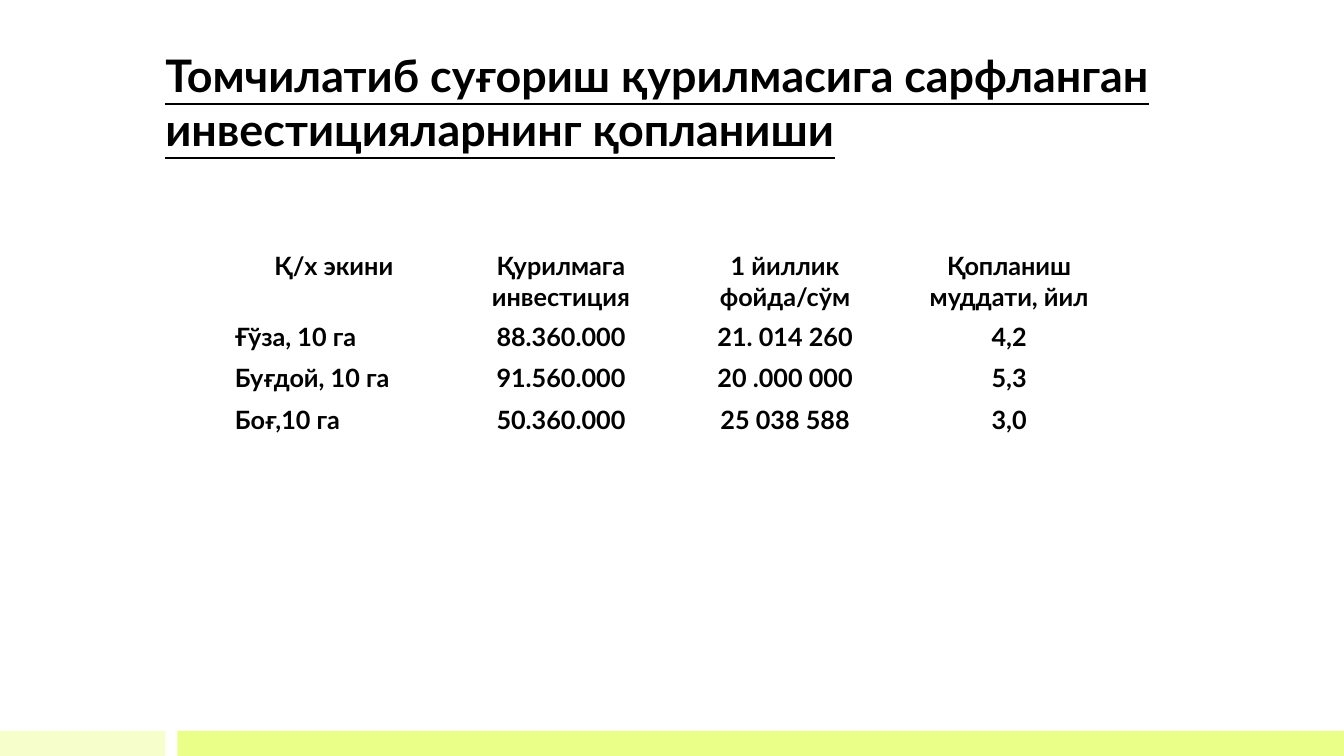
"""Build the slide on the payback of drip irrigation investments."""
from lxml import etree
from pptx import Presentation
from pptx.dml.color import RGBColor
from pptx.enum.shapes import MSO_SHAPE
from pptx.enum.text import MSO_ANCHOR, MSO_AUTO_SIZE, PP_ALIGN
from pptx.oxml.ns import qn
from pptx.util import Inches, Pt

RECT = MSO_SHAPE.RECTANGLE
BOTTOM = MSO_ANCHOR.BOTTOM
NO_FIT = MSO_AUTO_SIZE.NONE
LEFT, CENTER = PP_ALIGN.LEFT, PP_ALIGN.CENTER

TITLE = "Томчилатиб суғориш қурилмасига сарфланган инвестицияларнинг қопланиши"
ROWS = [
    ("Қ/х экини ", "Қурилмага инвестиция", "1 йиллик фойда/сўм", "Қопланиш муддати, йил"),
    ("Ғўза, 10 га", "88.360.000", "21. 014 260", "4,2"),
    ("Буғдой, 10 га", "91.560.000", "20 .000 000", "5,3"),
    ("Боғ,10 га", "50.360.000", "25 038 588", "3,0"),
]
THEME = {
    "font": "Lato", "text": "000000", "border": "FFFFFF",
    "pale": "F6FFCC", "lime": "E9FF88", "title": 32, "body": 18,
}
SLIDE_W, SLIDE_H = 13.33, 7.5
BAR_H = 0.25
BARS = [(0, 1.64, "pale"), (1.76, SLIDE_W - 1.76, "lime")]
TITLE_BOX = (1.54, 0.3, 10.25, 1.29)
TABLE_X, TABLE_Y, TABLE_W = 2.23, 2.44, 8.89
HEADER_H, ROW_H = 0.7, 0.41
THIN, THICK = 1, 3


def color(name):
    return RGBColor.from_string(THEME[name])


def write(tf, text, size, align, **extra):
    p = tf.paragraphs[0]
    p.alignment = align
    r = p.add_run()
    r.text = text
    font = {"name": THEME["font"], "size": Pt(THEME[size]), "bold": True, **extra}
    for key, value in font.items():
        setattr(r.font, key, value)
    r.font.color.rgb = color("text")


def add_borders(cell, top, bottom):
    tc_pr = cell._tc.get_or_add_tcPr()
    for side, width in {"L": THIN, "R": THIN, "T": top, "B": bottom}.items():
        ln = etree.SubElement(tc_pr, qn(f"a:ln{side}"), w=str(Pt(width)))
        fill = etree.SubElement(ln, qn("a:solidFill"))
        etree.SubElement(fill, qn("a:srgbClr"), val=THEME["border"])


def add_bars(slide):
    for x, width, fill in BARS:
        box = (x, SLIDE_H - BAR_H, width, BAR_H)
        sp = slide.shapes.add_shape(RECT, *map(Inches, box))
        sp.shadow.inherit = False
        sp.fill.solid()
        sp.fill.fore_color.rgb = color(fill)
        sp.line.fill.background()


def add_title(slide):
    sp = slide.shapes.title
    for key, value in zip(("left", "top", "width", "height"), TITLE_BOX):
        setattr(sp, key, Inches(value))
    tf = sp.text_frame
    frame = {"word_wrap": True, "auto_size": NO_FIT, "vertical_anchor": BOTTOM}
    for key, value in frame.items():
        setattr(tf, key, value)
    write(tf, TITLE, "title", LEFT, underline=True)


def add_payback_table(slide):
    heights = [HEADER_H] + [ROW_H] * (len(ROWS) - 1)
    box = (TABLE_X, TABLE_Y, TABLE_W, sum(heights))
    table = slide.shapes.add_table(len(ROWS), len(ROWS[0]), *map(Inches, box)).table
    table.first_row = table.horz_banding = False
    for i, (row, height) in enumerate(zip(ROWS, heights)):
        table.rows[i].height = Inches(height)
        for j, text in enumerate(row):
            cell = table.cell(i, j)
            add_borders(cell, THICK if i == 1 else THIN, THICK if i == 0 else THIN)
            cell.fill.background()
            write(cell.text_frame, text, "body", LEFT if i and j == 0 else CENTER)


def main():
    prs = Presentation()
    prs.slide_width, prs.slide_height = Inches(SLIDE_W), Inches(SLIDE_H)
    slide = prs.slides.add_slide(prs.slide_layouts[5])
    add_bars(slide)
    add_title(slide)
    add_payback_table(slide)
    prs.save("out.pptx")


if __name__ == "__main__":
    main()
